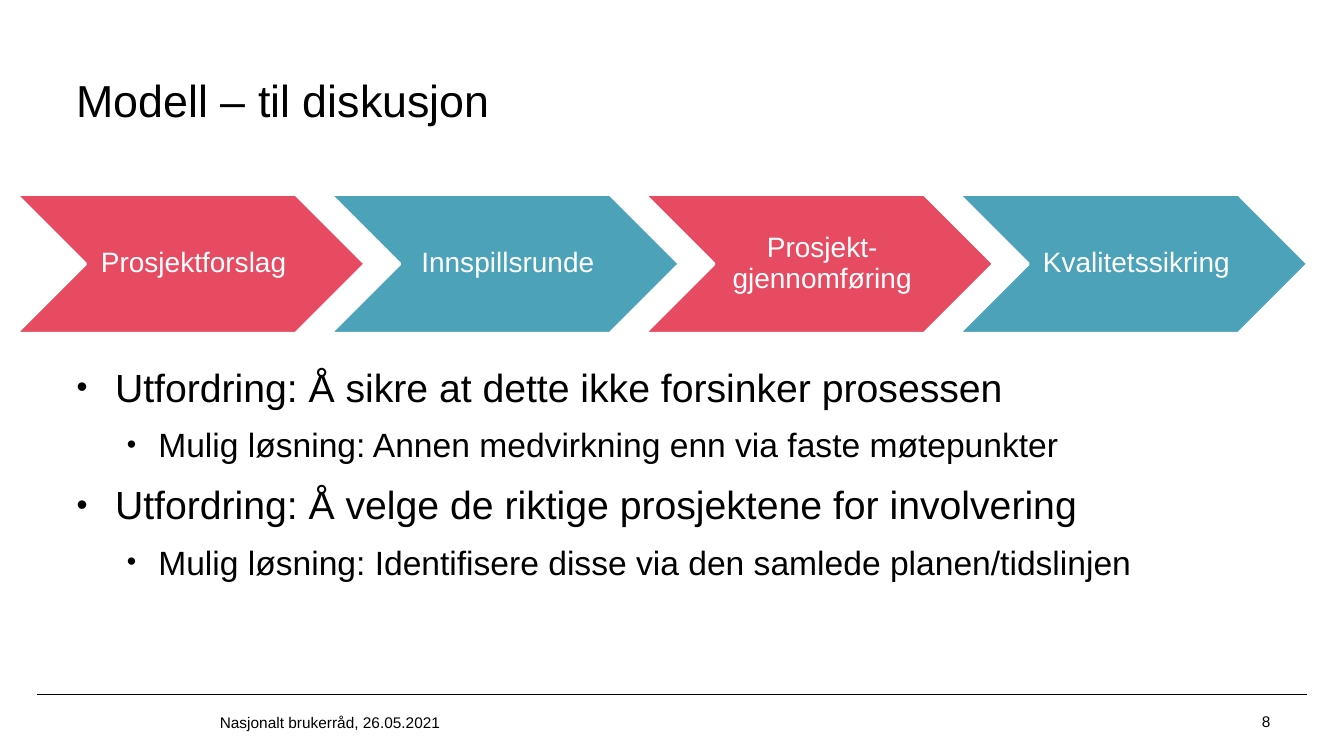
from dataclasses import dataclass

from lxml.etree import SubElement
from pptx import Presentation
from pptx.dml.color import RGBColor
from pptx.enum.shapes import MSO_CONNECTOR, MSO_SHAPE
from pptx.enum.text import MSO_ANCHOR, PP_ALIGN
from pptx.oxml.ns import qn
from pptx.slide import Slide
from pptx.text.text import TextFrame, _Paragraph
from pptx.util import Cm, Pt


@dataclass(frozen=True)
class Theme:
    font: str = "Arial"
    ink: str = "000000"
    paper: str = "FFFFFF"
    red: str = "E74B61"
    teal: str = "4CA2B9"
    title: int = 32
    main: int = 28
    sub: int = 24
    step: int = 20
    small: int = 11


@dataclass(frozen=True)
class Label:
    text: str
    left: float
    top: float
    width: float
    height: float
    size: int


@dataclass(frozen=True)
class Step:
    text: str
    fill: str


@dataclass(frozen=True)
class Level:
    size: int
    left: float
    hang: float
    before: int


@dataclass(frozen=True)
class Point:
    text: str
    level: int


THEME = Theme()
LABELS = [
    Label("Modell – til diskusjon", 1.93, 1.63, 29.34, 1.78, THEME.title),
    Label("Nasjonalt brukerråd, 26.05.2021", 5.54, 17.83, 20.4, 0.74, THEME.small),
    Label("8", 31.8, 17.83, 1.09, 0.71, THEME.small),
]
STEPS = [
    Step("Prosjektforslag", THEME.red),
    Step("Innspillsrunde", THEME.teal),
    Step("Prosjekt-gjennomføring", THEME.red),
    Step("Kvalitetssikring", THEME.teal),
]
LEVELS = [Level(THEME.main, 0.97, 0.97, 5), Level(THEME.sub, 2.06, 0.79, 4)]
POINTS = [
    Point("Utfordring: Å sikre at dette ikke forsinker prosessen", 0),
    Point("Mulig løsning: Annen medvirkning enn via faste møtepunkter", 1),
    Point("Utfordring: Å velge de riktige prosjektene for involvering", 0),
    Point("Mulig løsning: Identifisere disse via den samlede planen/tidslinjen", 1),
]


def tint(code: str) -> RGBColor:
    return RGBColor.from_string(code)


def set_frame(frame: TextFrame, anchor: MSO_ANCHOR, left: float = 0, rest: float = 0) -> None:
    frame.word_wrap = True
    frame.vertical_anchor = anchor
    frame.margin_left = Cm(left)
    frame.margin_top = frame.margin_right = frame.margin_bottom = Cm(rest)


def add_run(para: _Paragraph, text: str, size: int, color: str) -> None:
    run = para.add_run()
    run.text = text
    run.font.name = THEME.font
    run.font.size = Pt(size)
    run.font.color.rgb = tint(color)


def add_label(slide: Slide, label: Label) -> None:
    box = slide.shapes.add_textbox(
        Cm(label.left), Cm(label.top), Cm(label.width), Cm(label.height))
    set_frame(box.text_frame, MSO_ANCHOR.MIDDLE)
    add_run(box.text_frame.paragraphs[0], label.text, label.size, THEME.ink)


def add_rule(slide: Slide) -> None:
    rule = slide.shapes.add_connector(
        MSO_CONNECTOR.STRAIGHT, Cm(0.94), Cm(17.5), Cm(32.94), Cm(17.5))
    rule.line.color.rgb = tint(THEME.ink)
    rule.line.width = Pt(0.5)
    SubElement(rule._element.spPr, qn("a:effectLst"))


def add_step(slide: Slide, step: Step, left: float) -> None:
    shape = slide.shapes.add_shape(
        MSO_SHAPE.CHEVRON, Cm(left), Cm(4.9), Cm(8.79), Cm(3.5))
    shape.shadow.inherit = False
    shape.fill.solid()
    shape.fill.fore_color.rgb = tint(step.fill)
    shape.line.color.rgb = tint(THEME.paper)
    shape.line.width = Pt(2)
    set_frame(shape.text_frame, MSO_ANCHOR.MIDDLE, 0.23, 0.08)
    para = shape.text_frame.paragraphs[0]
    para.alignment = PP_ALIGN.CENTER
    para.line_spacing = 0.9
    add_run(para, step.text, THEME.step, THEME.paper)


def add_points(slide: Slide, points: list[Point]) -> None:
    box = slide.shapes.add_textbox(Cm(1.93), Cm(8.92), Cm(29.34), Cm(7.72))
    frame = box.text_frame
    set_frame(frame, MSO_ANCHOR.TOP)
    for place, point in enumerate(points):
        level = LEVELS[point.level]
        para = frame.add_paragraph() if place else frame.paragraphs[0]
        para.level = point.level
        para.line_spacing = 1.2
        para.space_before = Pt(level.before if place else 0)
        props = para._p.get_or_add_pPr()
        props.set("marL", str(Cm(level.left)))
        props.set("indent", str(-Cm(level.hang)))
        SubElement(props, qn("a:buSzPct"), val="80000")
        SubElement(props, qn("a:buFont"), typeface=THEME.font)
        SubElement(props, qn("a:buChar"), char="•")
        add_run(para, point.text, level.size, THEME.ink)


def main() -> None:
    deck = Presentation()
    deck.slide_width, deck.slide_height = Cm(33.87), Cm(19.05)
    slide = deck.slides.add_slide(deck.slide_layouts[6])
    add_rule(slide)
    for label in LABELS:
        add_label(slide, label)
    add_points(slide, POINTS)
    for place, step in enumerate(STEPS):
        add_step(slide, step, 0.41 + 7.92 * place)
    deck.save("out.pptx")


if __name__ == "__main__":
    main()
